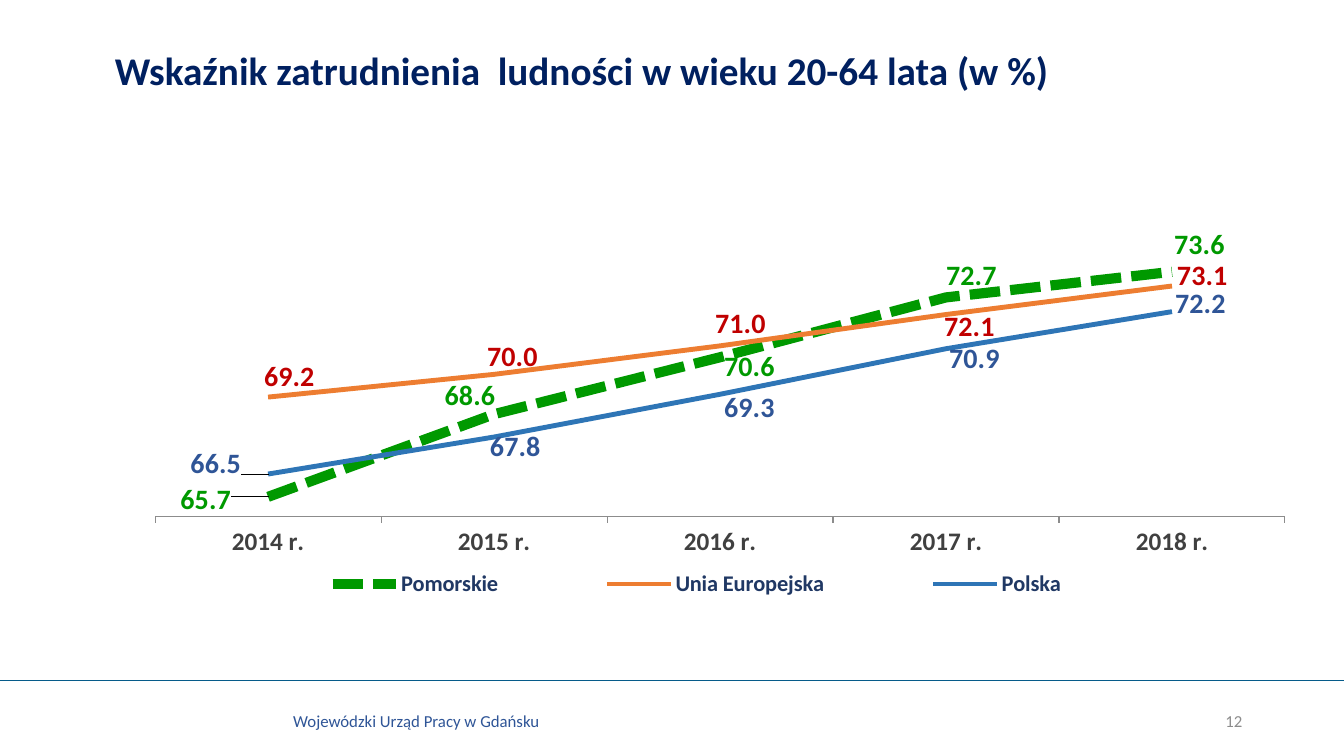
from lxml import etree
from pptx import Presentation
from pptx import util as u
from pptx.chart import data as chart_data
from pptx.dml.color import RGBColor
from pptx.enum import chart as ch, dml, shapes, text
from pptx.oxml import ns

WIDTH, HEIGHT = 13.33, 7.5
CHART_WIDTH, CHART_HEIGHT = 12.16, 4.33
FONT = "Calibri"
NUMBER_FORMAT = "#,##0.0"

NAVY = RGBColor(0x00, 0x20, 0x60)
LEGEND_NAVY = RGBColor(0x20, 0x38, 0x64)
BLUE = RGBColor(0x2F, 0x55, 0x97)
RULE_BLUE = RGBColor(0x06, 0x5B, 0x8A)
LINE_BLUE = RGBColor(0x2E, 0x75, 0xB6)
GREEN = RGBColor(0x00, 0x99, 0x00)
ORANGE = RGBColor(0xED, 0x7D, 0x31)
RED = RGBColor(0xC0, 0x00, 0x00)
DARK_GREY = RGBColor(0x40, 0x40, 0x40)
GREY = RGBColor(0x8C, 0x8C, 0x8C)

YEARS = [f"{year} r." for year in range(2014, 2019)]
# Name, values, line colour, line width, dash, label colour, label shifts in inches
SERIES = [
    ("Pomorskie", (65.7, 68.6, 70.6, 72.7, 73.6), GREEN, 7.25,
     dml.MSO_LINE.SQUARE_DOT, GREEN,
     ((-0.91, 0.03), (-0.53, -0.19), (0, 0.09), (-0.04, -0.22), (-0.02, -0.27))),
    ("Unia Europejska", (69.2, 70, 71, 72.1, 73.1), ORANGE, 3.5, None, RED,
     ((-0.08, -0.2), (-0.11, -0.18), (-0.09, -0.22), (-0.06, 0.12), (0.01, -0.1))),
    ("Polska", (66.5, 67.8, 69.3, 70.9, 72.2), LINE_BLUE, 3.5, None, BLUE,
     ((-0.81, -0.11), (-0.08, 0.09), (0, 0.13), (-0.01, 0.1), (-0.01, -0.08))),
]


def style_font(font, size, color, bold=False):
    font.name, font.size, font.bold = FONT, u.Pt(size), bold
    font.color.rgb = color


def place(shape, left, top, width, height):
    shape.left, shape.top = u.Inches(left), u.Inches(top)
    shape.width, shape.height = u.Inches(width), u.Inches(height)


def write(shape, words, size, color, bold=False, align=text.PP_ALIGN.LEFT):
    frame = shape.text_frame
    frame.word_wrap = True
    frame.vertical_anchor = text.MSO_ANCHOR.MIDDLE
    paragraph = frame.paragraphs[0]
    paragraph.alignment = align
    run = paragraph.add_run()
    run.text = words
    style_font(run.font, size, color, bold)


def add_text(slide, box, words, size, color, **options):
    shape = slide.shapes.add_textbox(*map(u.Inches, box))
    write(shape, words, size, color, **options)


def add_rule(slide, top):
    rule = slide.shapes.add_connector(
        shapes.MSO_CONNECTOR.STRAIGHT, 0, u.Inches(top), u.Inches(WIDTH), u.Inches(top))
    rule.line.color.rgb = RULE_BLUE
    rule.line.width = u.Pt(1)
    etree.SubElement(rule._element.spPr, ns.qn("a:effectLst"))


def set_layout(parent, index, **values):
    """Give a chart part a manual layout, as shares of the chart."""
    for old in parent.findall(ns.qn("c:layout")):
        parent.remove(old)
    layout = etree.Element(ns.qn("c:layout"))
    manual = etree.SubElement(layout, ns.qn("c:manualLayout"))
    for tag, value in values.items():
        etree.SubElement(manual, ns.qn(f"c:{tag}")).set("val", str(value))
    parent.insert(index, layout)


def style_label(point, color, shift):
    label = point.data_label
    style_font(label.font, 20, color, True)
    label.position = ch.XL_LABEL_POSITION.RIGHT
    element = label._dLbl
    set_layout(element, 1, x=round(shift[0] / CHART_WIDTH, 4),
               y=round(shift[1] / CHART_HEIGHT, 4))
    number_format = etree.Element(ns.qn("c:numFmt"), formatCode=NUMBER_FORMAT, sourceLinked="0")
    element.insert(2, number_format)


def style_series(series, color, width, dash, label_color, shifts):
    series.smooth = False
    series.marker.style = ch.XL_MARKER_STYLE.NONE
    line = series.format.line
    line.color.rgb, line.width = color, u.Pt(width)
    if dash:
        line.dash_style = dash
    labels = series.data_labels
    labels.show_value = True
    labels.number_format, labels.number_format_is_linked = NUMBER_FORMAT, False
    style_font(labels.font, 20, label_color, True)
    for index, shift in enumerate(shifts):
        style_label(series.points[index], label_color, shift)


def style_axes(chart):
    years = chart.category_axis
    years.has_major_gridlines = False
    years.major_tick_mark = ch.XL_TICK_MARK.OUTSIDE
    years.format.line.color.rgb = GREY
    style_font(years.tick_labels.font, 18, DARK_GREY, True)
    rates = chart.value_axis
    rates.minimum_scale, rates.maximum_scale, rates.major_unit = 65, 75, 3
    rates.has_major_gridlines = False
    rates.visible = False


def add_employment_chart(slide):
    values = chart_data.CategoryChartData(number_format=NUMBER_FORMAT)
    values.categories = YEARS
    for name, rates, *_ in SERIES:
        values.add_series(name, rates)
    chart = slide.shapes.add_chart(
        ch.XL_CHART_TYPE.LINE, u.Inches(0.59), u.Inches(1.66),
        u.Inches(CHART_WIDTH), u.Inches(CHART_HEIGHT), values).chart
    chart.has_title = False
    chart.font.name, chart.font.size = FONT, u.Pt(10)
    plot = chart.plots[0]
    plot.vary_by_categories = False
    style_axes(chart)
    for series, (_, _, *style) in zip(plot.series, SERIES):
        style_series(series, *style)

    # Plot area and legend
    chart.has_legend = True
    legend = chart.legend
    legend.position = ch.XL_LEGEND_POSITION.RIGHT
    legend.include_in_layout = False
    style_font(legend.font, 16, LEGEND_NAVY, True)
    set_layout(legend._element, 1, xMode="edge", yMode="edge", x=0.14, y=0.91, w=0.76, h=0.09)
    plot_area = chart._chartSpace.chart.plotArea
    set_layout(plot_area, 0, layoutTarget="inner", xMode="edge", yMode="edge",
               x=0.078, y=0.148, w=0.922, h=0.653)


def main():
    presentation = Presentation()
    presentation.slide_width = u.Inches(WIDTH)
    presentation.slide_height = u.Inches(HEIGHT)
    slide = presentation.slides.add_slide(presentation.slide_layouts.get_by_name("Title Only"))

    # Title
    title = slide.shapes.title
    place(title, 1.04, 0.28, 11.17, 0.83)
    write(title, "Wskaźnik zatrudnienia  ludności w wieku 20-64 lata (w %)", 28, NAVY, bold=True)

    # Chart
    add_employment_chart(slide)

    # Footer
    add_rule(slide, 0.9 * HEIGHT)
    add_text(slide, (2.81, 7, 3.56, 0.3), "Wojewódzki Urząd Pracy w Gdańsku", 12, BLUE)
    add_text(slide, (9.42, 6.95, 3, 0.4), "12", 12, GREY, align=text.PP_ALIGN.RIGHT)

    presentation.save("out.pptx")


if __name__ == "__main__":
    main()
